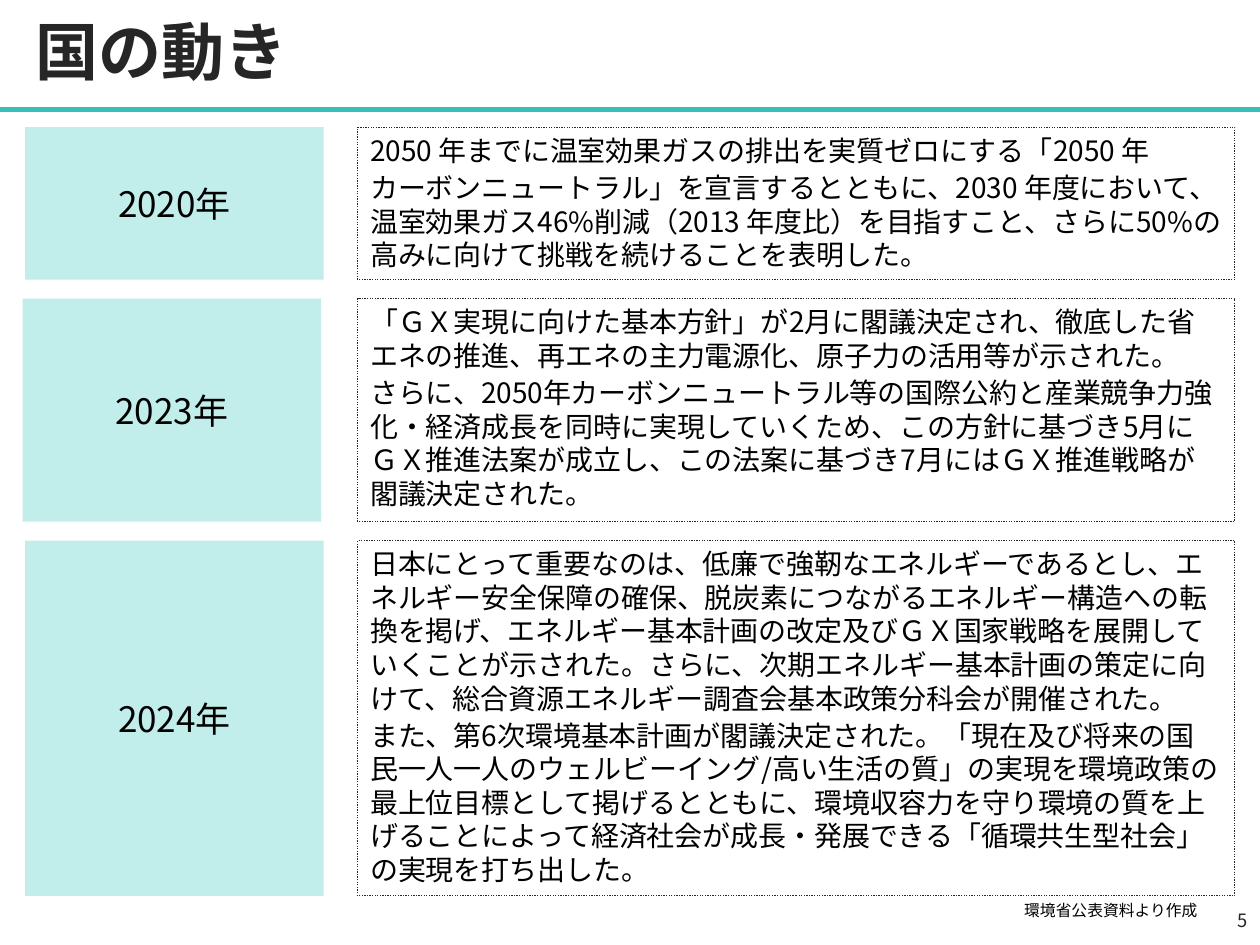
from dataclasses import dataclass

from lxml import etree
from pptx import Presentation
from pptx.dml.color import RGBColor
from pptx.enum.dml import MSO_LINE
from pptx.enum.lang import MSO_LANGUAGE_ID
from pptx.enum.shapes import MSO_CONNECTOR, MSO_SHAPE
from pptx.enum.text import MSO_ANCHOR, MSO_AUTO_SIZE, PP_ALIGN
from pptx.oxml.ns import qn
from pptx.util import Inches, Pt

LEFT, CENTER, RIGHT = PP_ALIGN.LEFT, PP_ALIGN.CENTER, PP_ALIGN.RIGHT
TOP, MIDDLE = MSO_ANCHOR.TOP, MSO_ANCHOR.MIDDLE


@dataclass(frozen=True)
class Theme:
    font: str = "Noto Sans CJK JP"
    ink: RGBColor = RGBColor(0x00, 0x00, 0x00)
    dark: RGBColor = RGBColor(0x26, 0x26, 0x26)
    accent: RGBColor = RGBColor(0x37, 0xBF, 0xB9)
    pale: RGBColor = RGBColor(0xC1, 0xED, 0xEB)
    title: float = 36
    year: float = 20
    body: float = 16
    page: float = 10.5
    source: float = 9


theme = Theme()


def write(shape, *paragraphs, size, color=theme.ink, bold=False, align=LEFT,
          anchor=TOP, before=0, spacing=None):
    frame = shape.text_frame
    frame.word_wrap = True
    frame.auto_size = MSO_AUTO_SIZE.NONE
    frame.vertical_anchor = anchor
    frame.text = "\n".join(paragraphs)
    for paragraph in frame.paragraphs:
        paragraph.alignment = align
        paragraph.space_before = Pt(before)
        paragraph.line_spacing = spacing
        run = paragraph.runs[0]
        run.font.size = Pt(size)
        run.font.bold = bold
        run.font.color.rgb = color
        run.font.name = theme.font
        run.font.language_id = MSO_LANGUAGE_ID.JAPANESE
        east_asian = etree.SubElement(run.font._element, qn("a:ea"))
        east_asian.set("typeface", theme.font)


def add_box(left, top, width, height):
    box = slide.shapes.add_shape(MSO_SHAPE.RECTANGLE, Inches(left), Inches(top),
                                 Inches(width), Inches(height))
    box.shadow.inherit = False
    return box


prs = Presentation()
prs.slide_width, prs.slide_height = Inches(10), Inches(7.5)
slide = prs.slides.add_slide(prs.slide_layouts[5])

# Title and rule below it
title = slide.shapes.title
title.left, title.top = Inches(0.18), Inches(0)
title.width, title.height = Inches(9.62), Inches(0.87)
write(title, "国の動き", size=theme.title, color=theme.dark, bold=True,
      anchor=MIDDLE, spacing=0.9)

rule = slide.shapes.add_connector(MSO_CONNECTOR.STRAIGHT, Inches(0), Inches(0.87),
                                  Inches(10), Inches(0.87))
rule.line.color.rgb = theme.accent
rule.line.width = Pt(3)
etree.SubElement(rule._element.spPr, qn("a:effectLst"))

# Year blocks with their developments: year, left edge, top, height, paragraphs
timeline = [
    ("2020年", 0.2, 1.01, 1.21, [
        "2050 年までに温室効果ガスの排出を実質ゼロにする「2050 年",
        "カーボンニュートラル」を宣言するとともに、2030 年度において、"
        "温室効果ガス46%削減（2013 年度比）を目指すこと、さらに"
        "50%の高みに向けて挑戦を続けることを表明した。",
    ]),
    ("2023年", 0.18, 2.37, 1.77, [
        "「ＧＸ実現に向けた基本方針」が2月に閣議決定され、徹底した省"
        "エネの推進、再エネの主力電源化、原子力の活用等が示された。",
        "さらに、2050年カーボンニュートラル等の国際公約と産業競争力"
        "強化・経済成長を同時に実現していくため、この方針に基づき5月"
        "にＧＸ推進法案が成立し、この法案に基づき7月にはＧＸ推進戦略"
        "が閣議決定された。",
    ]),
    ("2024年", 0.2, 4.29, 2.82, [
        "日本にとって重要なのは、低廉で強靭なエネルギーであるとし、エ"
        "ネルギー安全保障の確保、脱炭素につながるエネルギー構造への転"
        "換を掲げ、エネルギー基本計画の改定及びＧＸ国家戦略を展開して"
        "いくことが示された。さらに、次期エネルギー基本計画の策定に向"
        "けて、総合資源エネルギー調査会基本政策分科会が開催された。",
        "また、第6次環境基本計画が閣議決定された。「現在及び将来の国"
        "民一人一人のウェルビーイング/高い生活の質」の実現を環境政策"
        "の最上位目標として掲げるとともに、環境収容力を守り環境の質を"
        "上げることによって経済社会が成長・発展できる「循環共生型社"
        "会」の実現を打ち出した。",
    ]),
]
for year, left, top, height, developments in timeline:
    year_block = add_box(left, top, 2.37, height)
    year_block.fill.solid()
    year_block.fill.fore_color.rgb = theme.pale
    year_block.line.fill.background()
    write(year_block, year, size=theme.year, align=CENTER, anchor=MIDDLE)

    details = add_box(2.84, top, 6.96, height)
    details.fill.background()
    details.line.color.rgb = theme.dark
    details.line.width = Pt(0.75)
    details.line.dash_style = MSO_LINE.ROUND_DOT
    write(details, *developments, size=theme.body, before=2, spacing=Pt(19.2))

# Source note and page number
source = slide.shapes.add_textbox(Inches(5), Inches(7.1), Inches(4.6), Inches(0.25))
write(source, "環境省公表資料より作成", size=theme.source, align=RIGHT)

page = slide.shapes.add_textbox(Inches(7.75), Inches(7.1), Inches(2.25), Inches(0.4))
write(page, "5", size=theme.page, color=theme.dark, align=RIGHT, anchor=MIDDLE)

prs.save("out.pptx")
